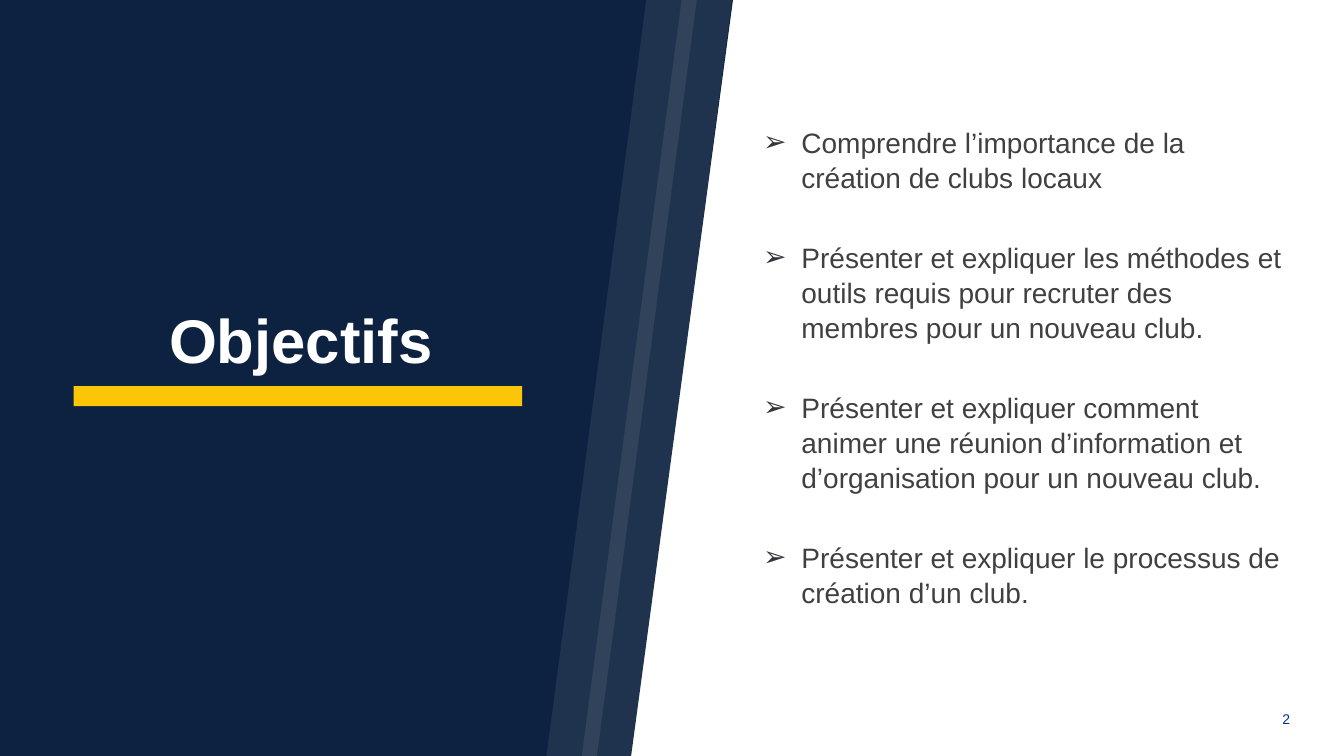
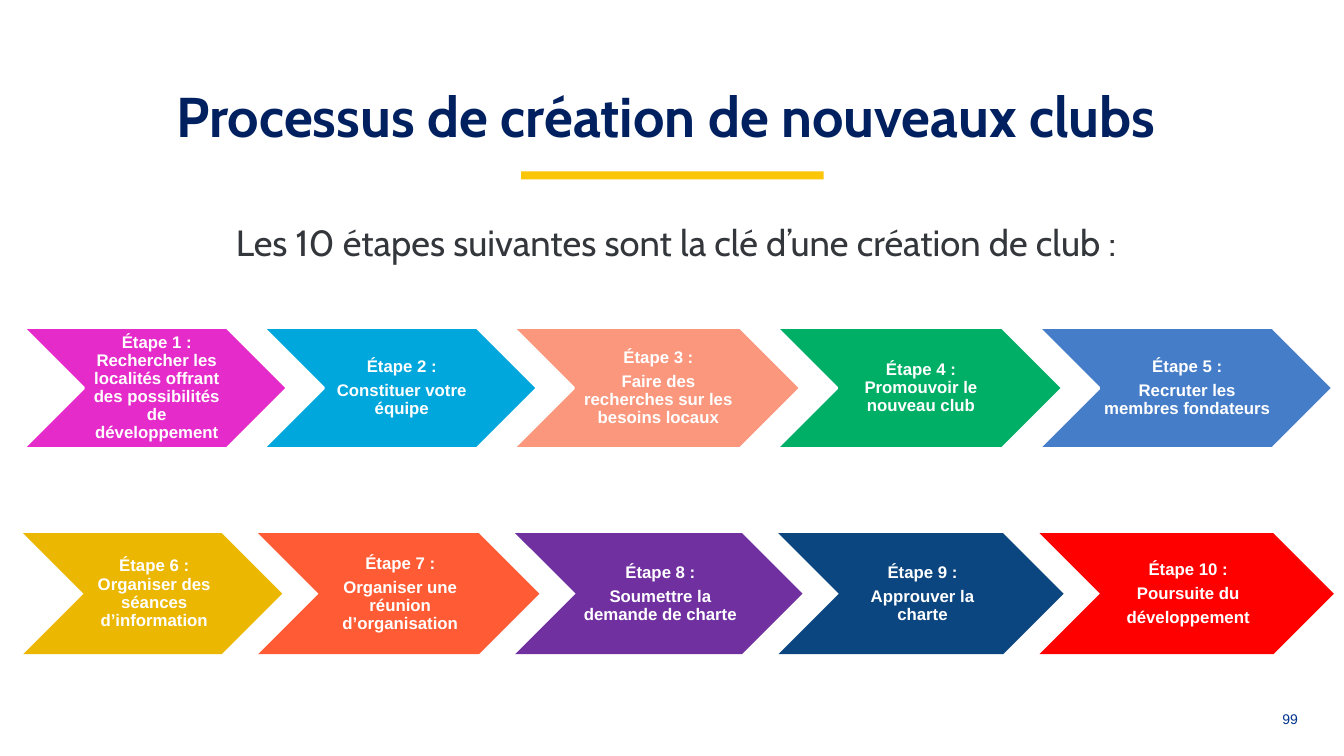
from lxml.etree import SubElement
from pptx import Presentation
from pptx.dml.color import RGBColor
from pptx.enum.shapes import MSO_SHAPE
from pptx.enum.text import MSO_ANCHOR, MSO_AUTO_SIZE, PP_ALIGN
from pptx.oxml.ns import qn
from pptx.util import Inches, Pt

NAVY = RGBColor(0x0D, 0x22, 0x40)
INK = RGBColor(0x00, 0x20, 0x60)
BLUE = RGBColor(0x00, 0x33, 0x8D)
GOLD = RGBColor(0xFB, 0xC6, 0x08)
GREY = RGBColor(0x40, 0x40, 0x40)
SLATE = RGBColor(0x33, 0x37, 0x3B)
WHITE = RGBColor(0xFF, 0xFF, 0xFF)
PINK = RGBColor(0xE5, 0x2B, 0xCA)
CYAN = RGBColor(0x00, 0xA7, 0xDC)
SALMON = RGBColor(0xFA, 0x97, 0x7D)
GREEN = RGBColor(0x00, 0xAF, 0x66)
AZURE = RGBColor(0x45, 0x7D, 0xC8)
AMBER = RGBColor(0xEB, 0xB7, 0x00)
CORAL = RGBColor(0xFF, 0x5C, 0x35)
PURPLE = RGBColor(0x70, 0x30, 0xA0)
OCEAN = RGBColor(0x0B, 0x46, 0x80)
RED = RGBColor(0xFF, 0x00, 0x00)

SANS, CABIN = "Arial", "Cabin"
WIDE, HIGH = 13.33, 7.5
STEP_H, LAP = 1.2, 0.24

GOALS = [
    "Comprendre l’importance de la création de clubs locaux",
    "Présenter et expliquer les méthodes et outils requis pour recruter des "
    "membres pour un nouveau club.",
    "Présenter et expliquer comment animer une réunion d’information et "
    "d’organisation pour un nouveau club.",
    "Présenter et expliquer le processus de création d’un club.",
]

# Each step: width, colour, paragraphs
FIRST = [
    (2.62, PINK, ["Étape 1 : Rechercher les localités offrant des possibilités "
                  "de développement"]),
    (2.72, CYAN, ["Étape 2 :", "Constituer votre équipe"]),
    (2.85, SALMON, ["Étape 3 :", "Faire des recherches sur les besoins locaux"]),
    (2.84, GREEN, ["Étape 4 : Promouvoir le nouveau club"]),
    (2.92, AZURE, ["Étape 5 :", "Recruter les membres fondateurs"]),
]
LAST = [
    (2.57, AMBER, ["Étape 6 : Organiser des séances d’information"]),
    (2.79, CORAL, ["Étape 7 :", "Organiser une réunion d’organisation"]),
    (2.85, PURPLE, ["Étape 8 :", "Soumettre la demande de charte"]),
    (2.83, OCEAN, ["Étape 9 :", "Approuver la charte"]),
    (2.92, RED, ["Étape 10 :", "Poursuite du", "développement"]),
]


def style(para, size, color, face=SANS, bold=False):
    font = para.font
    font.name, font.size, font.bold = face, Pt(size), bold
    font.color.rgb = color


def paint(shape, color):
    shape.shadow.inherit = False
    shape.fill.solid()
    shape.fill.fore_color.rgb = color
    shape.line.fill.background()


def write(frame, lines):
    """Fill the frame with one paragraph a line and return the paragraphs."""
    frame.word_wrap = True
    for i, line in enumerate(lines):
        para = frame.paragraphs[0] if i == 0 else frame.add_paragraph()
        para.text = line
    return frame.paragraphs


def label(slide, box, lines):
    return write(slide.shapes.add_textbox(*map(Inches, box)).text_frame, lines)


def head(slide, box, text, size, color, face, anchor):
    """Place the title in front of the shapes drawn so far."""
    title = slide.shapes.title
    title.left, title.top, title.width, title.height = map(Inches, box)
    frame = title.text_frame
    frame.auto_size = MSO_AUTO_SIZE.NONE
    frame.vertical_anchor = anchor
    para = write(frame, [text])[0]
    para.alignment = PP_ALIGN.CENTER
    style(para, size, color, face, True)
    title.element.getparent().append(title.element)


def bar(slide, box):
    paint(slide.shapes.add_shape(MSO_SHAPE.RECTANGLE, *map(Inches, box)), GOLD)


def page(slide, text):
    style(label(slide, (12.62, 7, 0.6, 0.5), [text])[0], 10, BLUE)


def outline(slide, points, color, alpha=None):
    start, *rest = [(Inches(x), Inches(y)) for x, y in points]
    pen = slide.shapes.build_freeform(*start)
    pen.add_line_segments(rest)
    shape = pen.convert_to_shape()
    paint(shape, color)
    if alpha:
        tone = shape.element.spPr.find(qn("a:solidFill"))[0]
        SubElement(tone, qn("a:alpha")).set("val", str(alpha * 1000))


def panel(slide):
    outline(slide, [(0, 0), (7.27, 0), (6.26, HIGH), (0, HIGH)], NAVY)
    for left, width in ((5.42, 0.5), (5.77, 0.5)):
        top = left + 0.99
        outline(slide, [(top, 0), (top + width, 0), (left + width, HIGH),
                        (left, HIGH)], WHITE, 8)


def bullet(para, mark, color):
    props = para._p.get_or_add_pPr()
    props.set("marL", str(Inches(0.38)))
    props.set("indent", str(-Inches(0.38)))
    tone = SubElement(SubElement(props, qn("a:buClr")), qn("a:srgbClr"))
    tone.set("val", str(color))
    SubElement(props, qn("a:buFont")).set("typeface", SANS)
    SubElement(props, qn("a:buChar")).set("char", mark)


def goals(slide, box):
    for i, para in enumerate(label(slide, box, GOALS)):
        bullet(para, "➢", SLATE)
        para.line_spacing = 1.05
        if i:
            para.space_before = Pt(31.5)
        style(para, 20, GREY)


def chevrons(slide, left, top, steps, edge):
    """Lay steps in a row, each overlapping the one before."""
    for width, color, lines in steps:
        step = slide.shapes.add_shape(
            MSO_SHAPE.CHEVRON, *map(Inches, (left, top, width, STEP_H)))
        paint(step, color)
        if edge:
            step.line.color.rgb = WHITE
            step.line.width = Pt(edge)
        frame = step.text_frame
        frame.vertical_anchor = MSO_ANCHOR.MIDDLE
        frame.margin_left = Inches(0.05)
        frame.margin_right = frame.margin_top = frame.margin_bottom = Inches(0.02)
        for para in write(frame, lines):
            para.alignment = PP_ALIGN.CENTER
            para.line_spacing = 0.9
            para.space_after = Pt(4.2)
            style(para, 12, WHITE, bold=True)
        left += width - LAP


def aims(slide):
    panel(slide)
    head(slide, (0.2, 2.68, 5.57, 1.1), "Objectifs", 44, WHITE, SANS,
         MSO_ANCHOR.BOTTOM)
    bar(slide, (0.73, 3.83, 4.45, 0.2))
    goals(slide, (7.47, 1.18, 5.37, 5.5))
    page(slide, "2")


def process(slide):
    head(slide, (0, 0.9, 13.21, 0.49), "Processus de création de nouveaux clubs",
         40, INK, CABIN, MSO_ANCHOR.MIDDLE)
    bar(slide, (5.17, 1.7, 3, 0.08))
    intro = label(slide, (0.59, 2.11, 12.24, 0.64),
                  ["Les 10 étapes suivantes sont la clé d’une création de club :"])[0]
    intro.alignment = PP_ALIGN.CENTER
    intro.line_spacing = 1.05
    style(intro, 26, SLATE, CABIN)
    chevrons(slide, 0.23, 3.25, FIRST, 2)
    chevrons(slide, 0.23, 5.29, LAST, 0)
    page(slide, "99")


def main():
    deck = Presentation()
    deck.slide_width, deck.slide_height = Inches(WIDE), Inches(HIGH)
    for build in (aims, process):
        build(deck.slides.add_slide(deck.slide_layouts[5]))
    deck.save("out.pptx")


if __name__ == "__main__":
    main()
